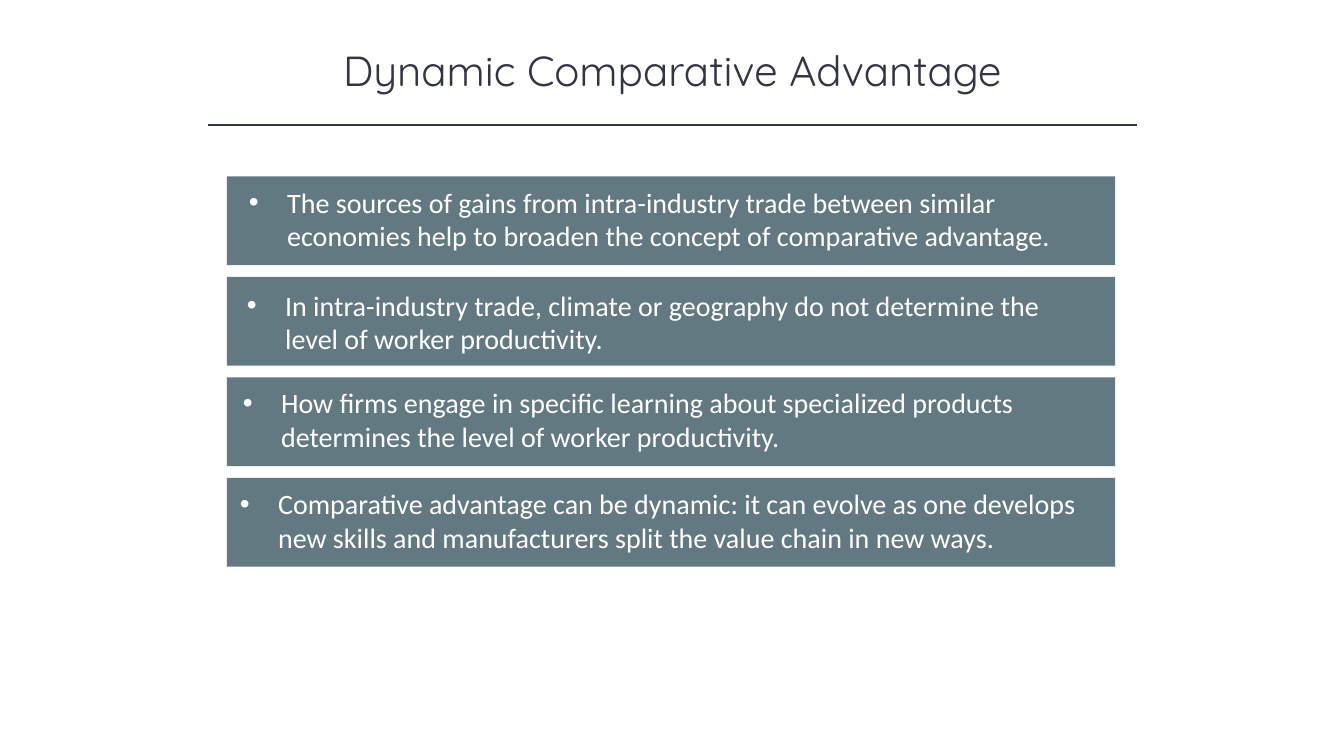
from dataclasses import dataclass

from lxml.etree import SubElement
from pptx import Presentation
from pptx.dml.color import RGBColor
from pptx.enum.shapes import MSO_CONNECTOR, MSO_SHAPE
from pptx.enum.text import MSO_ANCHOR, PP_ALIGN
from pptx.oxml.ns import qn
from pptx.shapes.autoshape import Shape
from pptx.shapes.shapetree import GroupShapes
from pptx.slide import Slide
from pptx.text.text import TextFrame
from pptx.util import Inches, Pt

INK = RGBColor(0x32, 0x35, 0x42)
SLATE = RGBColor(0x62, 0x79, 0x81)
WHITE = RGBColor(0xFF, 0xFF, 0xFF)

TITLE_FORMAT = {"name": "Quicksand", "size": Pt(30), "bold": False}
BODY_FORMAT = {"name": "Calibri", "size": Pt(20), "bold": False}
FRAME_FORMAT = {
    "word_wrap": True,
    "vertical_anchor": MSO_ANCHOR.TOP,
    "margin_left": Inches(0.1),
    "margin_right": Inches(0.1),
    "margin_top": Inches(0.05),
    "margin_bottom": Inches(0.05),
}

BAR_LEFT, BAR_TOP, BAR_WIDTH, BAR_HEIGHT = 2.25, 1.75, 8.81, 0.88
BAR_STEP = 0.997
TEXT_WIDTH, TEXT_HEIGHT = 8.54, 0.77


@dataclass(frozen=True)
class Point:
    text: str
    text_left: float
    text_top: float


POINTS = [
    Point("The sources of gains from intra-industry trade between similar economies "
          "help to broaden the concept of comparative advantage.", 2.37, 1.79),
    Point("In intra-industry trade, climate or geography do not determine the level "
          "of worker productivity.", 2.35, 2.81),
    Point("How firms engage in specific learning about specialized products determines "
          "the level of worker productivity.", 2.31, 3.78),
    Point("Comparative advantage can be dynamic: it can evolve as one develops new "
          "skills and manufacturers split the value chain in new ways.", 2.28, 4.78),
]


def set_attributes(target: object, values: dict) -> None:
    for name, value in values.items():
        setattr(target, name, value)


def write_text(frame: TextFrame, text: str, alignment: PP_ALIGN,
               font_format: dict, color: RGBColor, bullet: bool = False) -> None:
    set_attributes(frame, FRAME_FORMAT)
    para = frame.paragraphs[0]
    para.alignment = alignment
    if bullet:
        properties = para._p.get_or_add_pPr()
        properties.set("marL", str(Inches(0.38)))
        properties.set("indent", str(Inches(-0.38)))
        SubElement(properties, qn("a:buFont"), typeface="Arial")
        SubElement(properties, qn("a:buChar"), char="•")
    span = para.add_run()
    span.text = text
    set_attributes(span.font, font_format)
    span.font.color.rgb = color


def add_bar(shapes: GroupShapes, left: float, top: float,
            width: float, height: float) -> Shape:
    bar = shapes.add_shape(MSO_SHAPE.RECTANGLE, Inches(left), Inches(top),
                           Inches(width), Inches(height))
    bar.shadow.inherit = False
    bar.fill.solid()
    bar.fill.fore_color.rgb = SLATE
    bar.line.fill.background()
    return bar


def add_title(slide: Slide, text: str) -> None:
    title = slide.shapes.title
    set_attributes(title, {"left": Inches(1.67), "top": Inches(0.39),
                           "width": Inches(10), "height": Inches(0.61)})
    write_text(title.text_frame, text, PP_ALIGN.CENTER, TITLE_FORMAT, INK)


def add_rule(slide: Slide) -> None:
    rule = slide.shapes.add_connector(MSO_CONNECTOR.STRAIGHT, Inches(2.06),
                                      Inches(1.24), Inches(11.28), Inches(1.24))
    rule.line.color.rgb = INK
    rule.line.width = Pt(1)
    SubElement(rule._element.spPr, qn("a:effectLst"))


def add_point(slide: Slide, point: Point, index: int) -> None:
    group = slide.shapes.add_group_shape()
    add_bar(group.shapes, BAR_LEFT, BAR_TOP + index * BAR_STEP, BAR_WIDTH, BAR_HEIGHT)
    box = add_bar(group.shapes, point.text_left, point.text_top, TEXT_WIDTH, TEXT_HEIGHT)
    write_text(box.text_frame, point.text, PP_ALIGN.LEFT, BODY_FORMAT, WHITE, bullet=True)


def main() -> None:
    deck = Presentation()
    deck.slide_width = Inches(13.33)
    deck.slide_height = Inches(7.5)
    page = deck.slides.add_slide(deck.slide_layouts.get_by_name("Title Only"))

    # Heading
    add_title(page, "Dynamic Comparative Advantage")
    add_rule(page)

    # Stacked points
    for index, point in enumerate(POINTS):
        add_point(page, point, index)

    deck.save("out.pptx")


if __name__ == "__main__":
    main()
